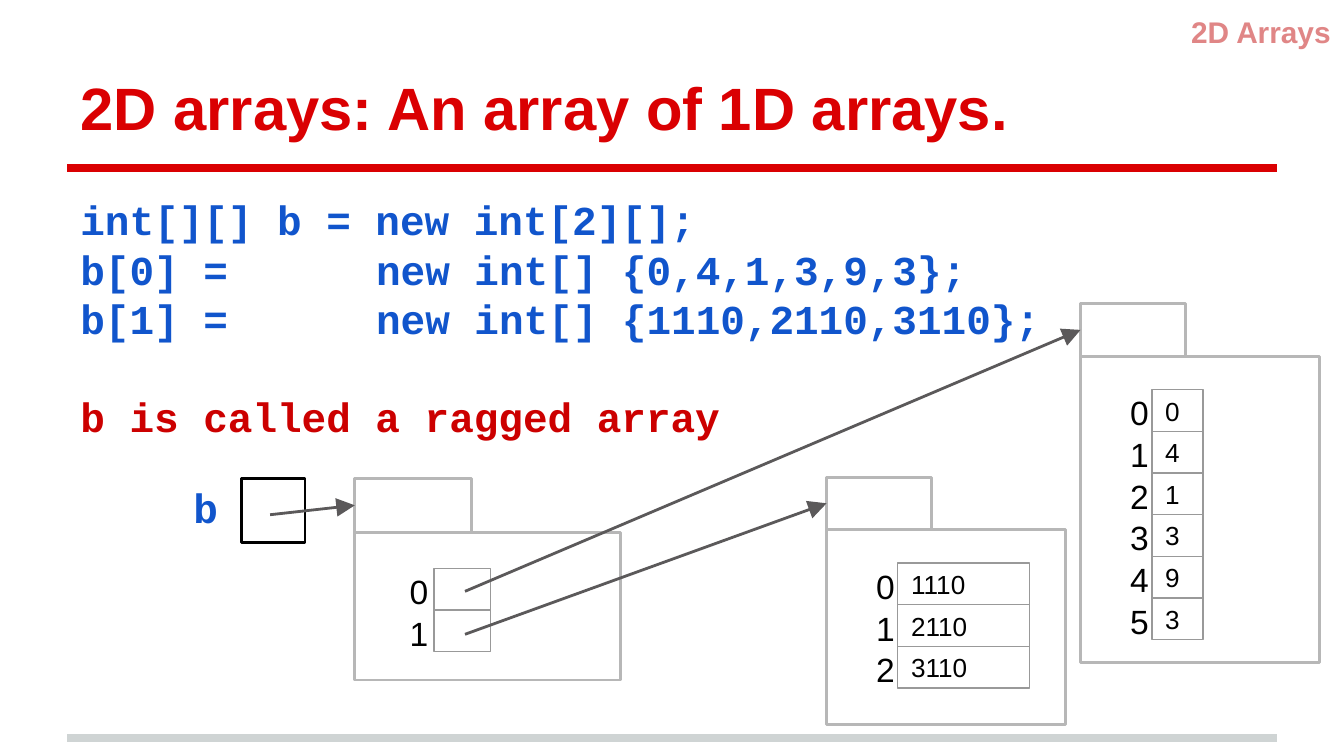
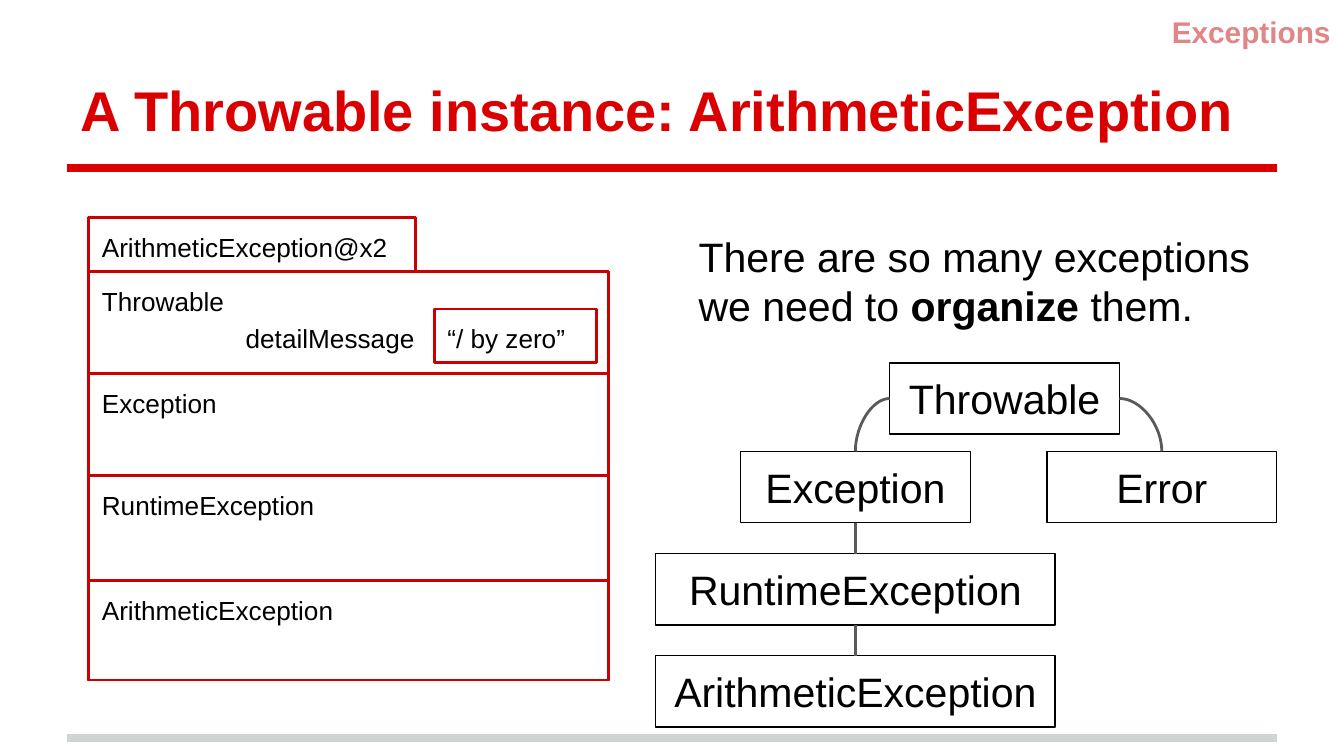
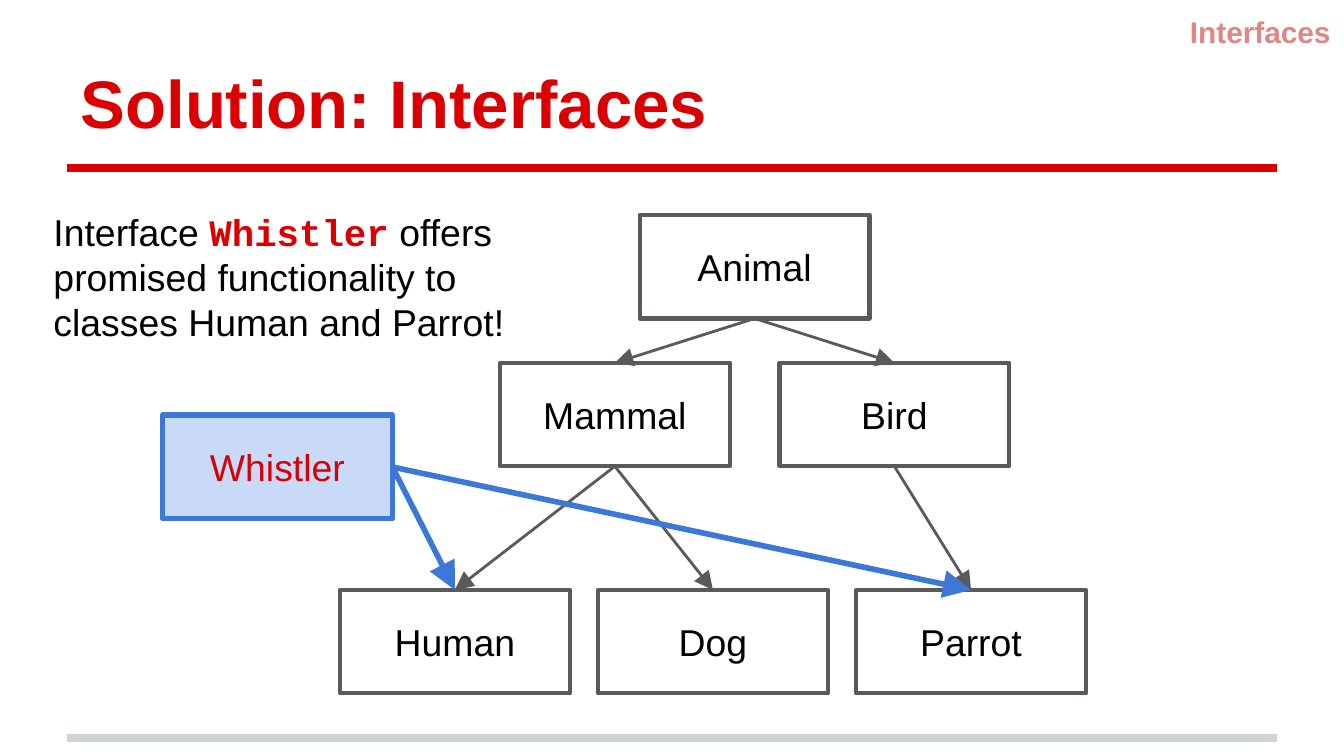
from dataclasses import dataclass, replace
from typing import Optional, Sequence

from lxml.etree import SubElement
from pptx import Presentation
from pptx.dml.color import RGBColor
from pptx.enum.shapes import MSO_CONNECTOR as Connector, MSO_SHAPE as Preset
from pptx.enum.text import MSO_ANCHOR as Anchor, MSO_AUTO_SIZE as AutoSize, PP_ALIGN as Align
from pptx.oxml.ns import qn
from pptx.util import Emu, Inches, Pt

RED = "DA0002"
DARK_RED = "CC0000"
PINK = "E08686"
BLACK = "000000"
GRAY = "5B595A"
FOLDER_GRAY = "B7B7B7"
CELL_GRAY = "999999"
FOOTER_GRAY = "CFD4D4"
CODE_BLUE = "1155CC"
BLUE = "3C78D8"
PALE_BLUE = "C9DAF8"
SANS = "Arial"
MONO = "Courier New"
LINE_HEIGHT = 1.2


@dataclass(frozen=True)
class Box:
    left: float
    top: float
    width: float
    height: float


@dataclass(frozen=True)
class TextStyle:
    size: float
    color: str = BLACK
    bold: bool = False
    font: str = SANS
    align: Align = Align.LEFT
    anchor: Anchor = Anchor.TOP


@dataclass(frozen=True)
class Stroke:
    color: str
    width: float


@dataclass(frozen=True)
class Run:
    text: str
    style: TextStyle


@dataclass(frozen=True)
class Folder:
    tab: Box
    body_width: float
    body_height: float
    cell: Box
    index_width: float
    values: Sequence[str]


@dataclass(frozen=True)
class Node:
    name: str
    box: Box


CODE = TextStyle(22, CODE_BLUE, True, MONO)
TOPIC = TextStyle(16, PINK, True, align=Align.RIGHT)
INDEX = TextStyle(18)
CELL = TextStyle(14, anchor=Anchor.MIDDLE)
FIELD = TextStyle(14)
BODY = TextStyle(22)
TREE = TextStyle(22, align=Align.CENTER, anchor=Anchor.MIDDLE)
ANIMAL = replace(TREE, size=20)

THIN_GRAY = Stroke(GRAY, 1.5)
FOLDER_LINE = Stroke(FOLDER_GRAY, 1.5)
CELL_LINE = Stroke(CELL_GRAY, 0.75)
OBJECT_LINE = Stroke(DARK_RED, 1.5)
INTERFACE_LINE = Stroke(BLUE, 3)


def rgb(color: str) -> RGBColor:
    return RGBColor.from_string(color)


def place(shape, box: Box) -> None:
    shape.left, shape.top = Inches(box.left), Inches(box.top)
    shape.width, shape.height = Inches(box.width), Inches(box.height)


def set_font(font, style: TextStyle) -> None:
    font.name = style.font
    font.size = Pt(style.size)
    font.bold = style.bold
    font.color.rgb = rgb(style.color)


def prepare_frame(shape, style: TextStyle):
    frame = shape.text_frame
    frame.word_wrap = True
    frame.auto_size = AutoSize.NONE
    frame.vertical_anchor = style.anchor
    frame.margin_left = frame.margin_right = Inches(0.1)
    frame.margin_top = frame.margin_bottom = Inches(0.1)
    return frame


def format_paragraph(paragraph, style: TextStyle) -> None:
    paragraph.alignment = style.align
    paragraph.line_spacing = Pt(style.size * LINE_HEIGHT)
    paragraph.space_before = paragraph.space_after = Pt(0)


def write(shape, text: str, style: TextStyle) -> None:
    paragraph = prepare_frame(shape, style).paragraphs[0]
    paragraph.text = text
    format_paragraph(paragraph, style)
    set_font(paragraph.font, style)


def add_text_box(slide, box: Box):
    return slide.shapes.add_textbox(
        Inches(box.left), Inches(box.top), Inches(box.width), Inches(box.height)
    )


def add_label(slide, box: Box, text: str, style: TextStyle) -> None:
    write(add_text_box(slide, box), text, style)


def add_rich_text(slide, box: Box, style: TextStyle, runs: Sequence[Run]) -> None:
    paragraph = prepare_frame(add_text_box(slide, box), style).paragraphs[0]
    format_paragraph(paragraph, style)
    for part in runs:
        run = paragraph.add_run()
        run.text = part.text
        set_font(run.font, part.style)


def add_rectangle(
    slide, box: Box, stroke: Stroke, text: str = "",
    style: TextStyle = FIELD, fill: Optional[str] = None,
):
    shape = slide.shapes.add_shape(Preset.RECTANGLE, 0, 0, 0, 0)
    place(shape, box)
    shape.shadow.inherit = False
    if fill:
        shape.fill.solid()
        shape.fill.fore_color.rgb = rgb(fill)
    else:
        shape.fill.background()
    shape.line.color.rgb = rgb(stroke.color)
    shape.line.width = Pt(stroke.width)
    if text:
        write(shape, text, style)
    return shape


def format_connector(connector, stroke: Stroke, arrow: bool = False) -> None:
    connector.line.color.rgb = rgb(stroke.color)
    connector.line.width = Pt(stroke.width)
    properties = connector.element.spPr
    if arrow:
        line = properties.find(qn("a:ln"))
        SubElement(line, qn("a:tailEnd"), type="triangle", w="lg", len="lg")
    SubElement(properties, qn("a:effectLst"))


def add_arrow_from(slide, left: float, top: float, target) -> None:
    connector = slide.shapes.add_connector(
        Connector.STRAIGHT, Inches(left), Inches(top),
        target.left, Emu(target.top + target.height // 2),
    )
    connector.end_connect(target, 1)
    format_connector(connector, THIN_GRAY, arrow=True)


def join(slide, source, source_side: int, target, target_side: int,
         stroke: Stroke, arrow: bool = False, curved: bool = False) -> None:
    kind = Connector.CURVE if curved else Connector.STRAIGHT
    connector = slide.shapes.add_connector(kind, 0, 0, 0, 0)
    connector.begin_connect(source, source_side)
    connector.end_connect(target, target_side)
    if curved:
        geometry = connector.element.spPr.find(qn("a:prstGeom"))
        geometry.set("prst", "curvedConnector2")
    format_connector(connector, stroke, arrow)


def add_layout_rules(slide) -> None:
    for top, color in ((5.49, FOOTER_GRAY), (1.25, RED)):
        rule = slide.shapes.add_connector(
            Connector.STRAIGHT, Inches(0.5), Inches(top), Inches(9.5), Inches(top)
        )
        format_connector(rule, Stroke(color, 4))
        slide.slide_layout.shapes.element.append(rule.element)


def add_titled_slide(presentation, title: str, title_size: float, topic: str):
    slide = presentation.slides.add_slide(presentation.slide_layouts[5])
    place(slide.shapes.title, Box(0.5, 0.22, 9, 0.94))
    write(slide.shapes.title, title, TextStyle(title_size, RED, True, anchor=Anchor.BOTTOM))
    add_label(slide, Box(7.66, 0, 2.34, 0.4), topic, TOPIC)
    return slide


def add_folder(slide, folder: Folder):
    tab, cell = folder.tab, folder.cell
    body = Box(tab.left, tab.top + tab.height, folder.body_width, folder.body_height)
    add_rectangle(slide, body, FOLDER_LINE)
    for index, value in enumerate(folder.values):
        top = cell.top + index * cell.height
        add_rectangle(slide, replace(cell, top=top), CELL_LINE, value, CELL)
        index_box = Box(cell.left - folder.index_width, top - 0.08, folder.index_width, 0.47)
        add_label(slide, index_box, str(index), INDEX)
    return add_rectangle(slide, tab, FOLDER_LINE)


def add_code(slide) -> None:
    lines = (
        ("int[][] b = new int[2][];", CODE),
        ("b[0] =\tnew int[] {0,4,1,3,9,3};", CODE),
        ("b[1] =\tnew int[] {1110,2110,3110};", CODE),
        ("b is called a ragged array", replace(CODE, color=DARK_RED)),
    )
    frame = prepare_frame(add_text_box(slide, Box(0.5, 1.35, 8.58, 2.17)), CODE)
    for number, (text, style) in enumerate(lines):
        paragraph = frame.add_paragraph() if number else frame.paragraphs[0]
        paragraph.text = text
        format_paragraph(paragraph, style)
        if "\t" in text:
            tabs = SubElement(paragraph._p.get_or_add_pPr(), qn("a:tabLst"))
            SubElement(tabs, qn("a:tab"), pos=str(Inches(2.2)), algn="l")
        set_font(paragraph.font, style)
    frame.paragraphs[-1].space_before = Pt(CODE.size * LINE_HEIGHT)


def build_arrays(presentation):
    slide = add_titled_slide(
        presentation, "2D arrays: An array of 1D arrays.", 32, "2D Arrays"
    )
    outer, first_row, second_row = [
        add_folder(slide, folder)
        for folder in (
            Folder(Box(2.64, 3.56, 0.87, 0.4), 1.98, 1.1,
                   Box(3.23, 4.23, 0.42, 0.31), 0.28, ("", "")),
            Folder(Box(8.04, 2.26, 0.78, 0.39), 1.78, 2.28,
                   Box(8.57, 2.9, 0.38, 0.31), 0.26, ("0", "4", "1", "3", "9", "3")),
            Folder(Box(6.15, 3.55, 0.78, 0.39), 1.78, 1.45,
                   Box(6.68, 4.19, 0.98, 0.31), 0.26, ("1110", "2110", "3110")),
        )
    ]
    add_label(slide, Box(1.34, 3.49, 0.54, 0.6), "b", CODE)
    add_rectangle(slide, Box(1.8, 3.56, 0.47, 0.48), Stroke(BLACK, 1.5))
    add_arrow_from(slide, 2.01, 3.83, outer)
    add_arrow_from(slide, 3.46, 4.4, first_row)
    add_arrow_from(slide, 3.46, 4.72, second_row)
    add_code(slide)
    return slide


def build_exceptions(presentation) -> None:
    slide = add_titled_slide(
        presentation, "A Throwable instance: ArithmeticException", 30, "Exceptions"
    )
    add_rectangle(slide, Box(0.66, 1.62, 2.43, 0.4), OBJECT_LINE, "ArithmeticException@x2")
    object_bottom = 5.06
    for name, top in (
        ("Throwable", 2.02), ("Exception", 2.78),
        ("RuntimeException", 3.54), ("ArithmeticException", 4.32),
    ):
        add_rectangle(slide, Box(0.66, top, 3.87, object_bottom - top), OBJECT_LINE, name)
    add_rectangle(slide, Box(3.23, 2.3, 1.21, 0.4), OBJECT_LINE, "“/ by zero”")
    add_label(slide, Box(1.73, 2.3, 1.5, 0.4), "detailMessage", FIELD)
    add_rich_text(slide, Box(5.1, 1.62, 4.59, 0.94), BODY, (
        Run("There are so many exceptions we need to ", BODY),
        Run("organize", replace(BODY, bold=True)),
        Run(" them.", BODY),
    ))

    throwable, exception, error, runtime, arithmetic = [
        add_rectangle(slide, node.box, Stroke(BLACK, 0.75), node.name, TREE)
        for node in (
            Node("Throwable", Box(6.62, 2.7, 1.71, 0.53)),
            Node("Exception", Box(5.51, 3.36, 1.71, 0.53)),
            Node("Error", Box(7.79, 3.36, 1.71, 0.53)),
            Node("RuntimeException", Box(4.88, 4.12, 2.97, 0.53)),
            Node("ArithmeticException", Box(4.88, 4.88, 2.97, 0.53)),
        )
    ]
    join(slide, throwable, 1, exception, 0, THIN_GRAY, curved=True)
    join(slide, throwable, 3, error, 0, THIN_GRAY, curved=True)
    join(slide, runtime, 0, exception, 2, THIN_GRAY)
    join(slide, arithmetic, 0, runtime, 2, THIN_GRAY)


def build_interfaces(presentation) -> None:
    slide = add_titled_slide(presentation, "Solution: Interfaces", 36, "Interfaces")
    animals = {
        name: add_rectangle(
            slide, Box(left, top, 1.71, 0.77), Stroke(GRAY, 2.25), name, ANIMAL
        )
        for name, left, top in (
            ("Animal", 4.76, 1.6),
            ("Mammal", 3.72, 2.7),
            ("Bird", 5.8, 2.7),
            ("Human", 2.53, 4.39),
            ("Dog", 4.45, 4.39),
            ("Parrot", 6.37, 4.39),
        )
    }
    whistler = add_rectangle(
        slide, Box(1.21, 3.09, 1.71, 0.77), INTERFACE_LINE,
        "Whistler", replace(ANIMAL, color=RED), PALE_BLUE,
    )
    for parent, child in (
        ("Animal", "Mammal"), ("Animal", "Bird"), ("Mammal", "Human"),
        ("Mammal", "Dog"), ("Bird", "Parrot"),
    ):
        join(slide, animals[parent], 2, animals[child], 0, THIN_GRAY, arrow=True)
    for name in ("Human", "Parrot"):
        join(slide, whistler, 3, animals[name], 0, INTERFACE_LINE, arrow=True)

    body = replace(BODY, size=20)
    add_rich_text(slide, Box(0.3, 1.46, 3.94, 1.09), body, (
        Run("Interface ", body),
        Run("Whistler", replace(body, color=RED, bold=True, font=MONO)),
        Run(" offers promised functionality to classes Human and Parrot!", body),
    ))


def main() -> None:
    presentation = Presentation()
    presentation.slide_width = Inches(10)
    presentation.slide_height = Emu(presentation.slide_width * 9 // 16)
    arrays_slide = build_arrays(presentation)
    add_layout_rules(arrays_slide)
    build_exceptions(presentation)
    build_interfaces(presentation)
    presentation.save("out.pptx")


if __name__ == "__main__":
    main()
